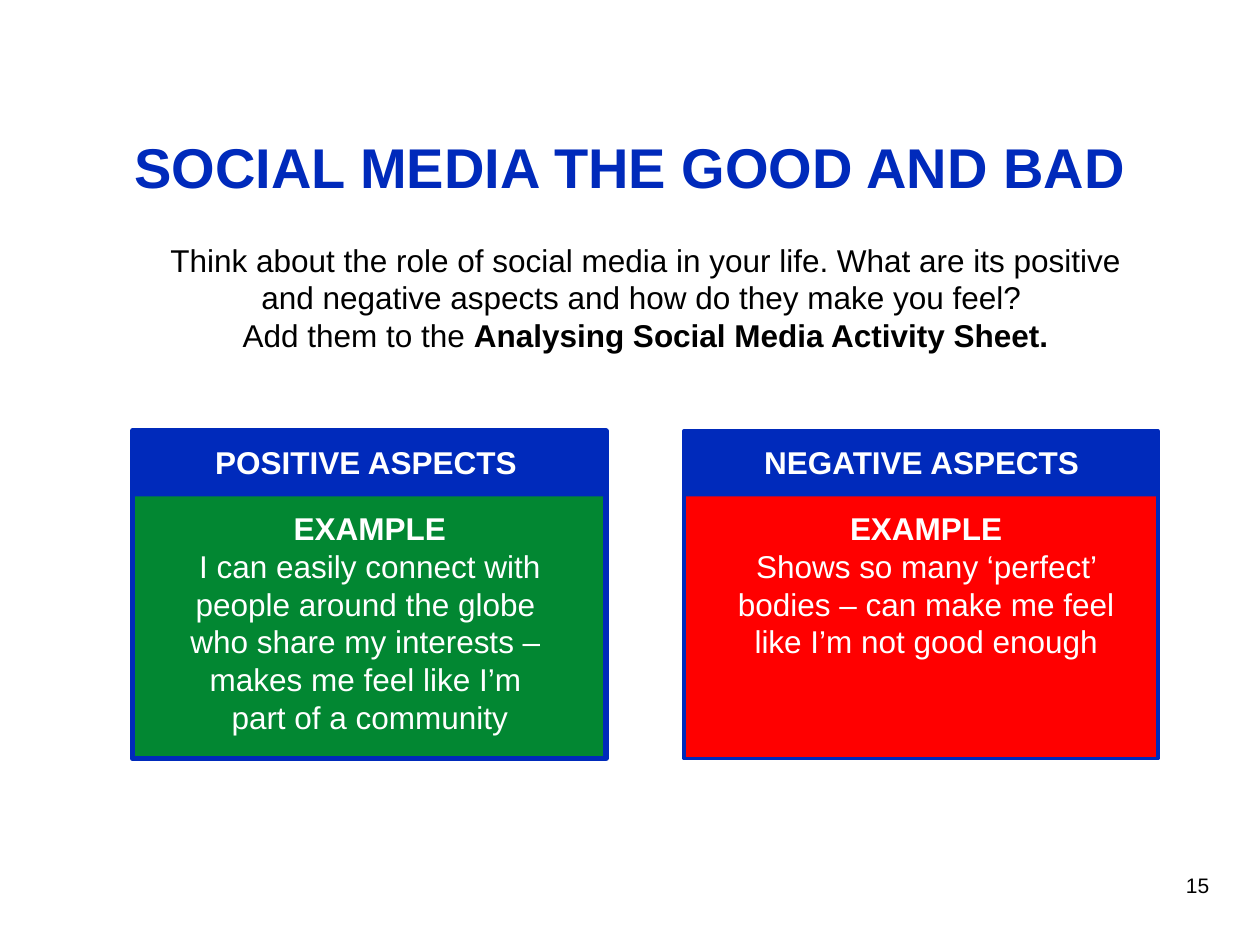
from dataclasses import dataclass

from pptx import Presentation
from pptx.dml.color import RGBColor
from pptx.enum.shapes import MSO_SHAPE as Shape
from pptx.enum.text import MSO_ANCHOR as Anchor, PP_ALIGN as Align
from pptx.util import Inches, Pt

WIDTH, HEIGHT = 10, 7.5
COLORS = {"blue": "002ABB", "green": "028732", "red": "FF0000",
          "white": "FFFFFF", "black": "000000"}

# Cards: shared rows and sizes, in inches
CARD_TOP, CARD_W, CARD_H, HEADER_H = 3.42, 3.76, 2.6, 0.52
CARD_LEFT, CARD_STEP = 1.05, 4.38
LABEL_TOP, LABEL_W, LABEL_H = 3.47, 3.95, 0.4
EXAMPLE_TOP = 3.99


@dataclass
class Box:
    left: float
    top: float
    width: float
    height: float

    def lengths(self) -> list:
        return [Inches(v) for v in (self.left, self.top, self.width, self.height)]


@dataclass
class Run:
    text: str
    bold: bool = False


@dataclass
class Card:
    column: int
    fill: str
    line_width: float
    label: str
    label_left: float
    example: str
    example_box: Box


CARDS = [
    Card(1, "red", 2, "NEGATIVE ASPECTS", 5.34,
         "Shows so many ‘perfect’ bodies – can make me feel like I’m not good enough",
         Box(5.79, EXAMPLE_TOP, 3.12, 1.31)),
    Card(0, "green", 3, "POSITIVE ASPECTS", 0.93,
         "I can easily connect with people around the globe \n"
         "who share my interests – \nmakes me feel like I’m \npart of a community",
         Box(1.26, EXAMPLE_TOP, 3.35, 1.92)),
]


def rgb(name: str) -> RGBColor:
    return RGBColor.from_string(COLORS[name])


def add_text(shapes, box: Box, runs: list[Run], color: str = "black",
             size: float = 18, anchor=Anchor.TOP) -> None:
    """Centred Arial text; a newline in a run becomes a line break."""
    tf = shapes.add_textbox(*box.lengths()).text_frame
    margins = {f"margin_{side}": Inches(0.05)
               for side in ("left", "top", "right", "bottom")}
    for key, value in {"word_wrap": True, "vertical_anchor": anchor, **margins}.items():
        setattr(tf, key, value)
    p = tf.paragraphs[0]
    p.alignment = Align.CENTER
    for run in runs:
        for i, line in enumerate(run.text.split("\n")):
            if i:
                p.add_line_break()
            if not line:
                continue
            r = p.add_run()
            r.text = line
            for key, value in {"name": "Arial", "size": Pt(size), "bold": run.bold}.items():
                setattr(r.font, key, value)
            r.font.color.rgb = rgb(color)


def add_rect(shapes, box: Box, fill: str, line_width: float = 0) -> None:
    sp = shapes.add_shape(Shape.RECTANGLE, *box.lengths())
    sp.shadow.inherit = False
    sp.fill.solid()
    sp.fill.fore_color.rgb = rgb(fill)
    if line_width:
        sp.line.color.rgb = rgb("blue")
        sp.line.width = Pt(line_width)
    else:
        sp.line.fill.background()


def add_card(shapes, card: Card) -> None:
    left = CARD_LEFT + card.column * CARD_STEP
    group = shapes.add_group_shape().shapes
    add_rect(group, Box(left, CARD_TOP, CARD_W, CARD_H), card.fill, card.line_width)
    add_rect(group, Box(left, CARD_TOP, CARD_W, HEADER_H), "blue")
    add_text(group, Box(card.label_left, LABEL_TOP, LABEL_W, LABEL_H),
             [Run(card.label, True)], "white")
    add_text(shapes, card.example_box,
             [Run("EXAMPLE\n", True), Run(card.example)], "white")


def main() -> None:
    prs = Presentation()
    prs.slide_width, prs.slide_height = Inches(WIDTH), Inches(HEIGHT)
    shapes = prs.slides.add_slide(prs.slide_layouts[6]).shapes

    # Title and task
    add_text(shapes, Box(0.5, 0.77, 9, 1.1),
             [Run("SOCIAL MEDIA THE GOOD AND BAD", True)], "blue", 32, Anchor.MIDDLE)
    add_text(shapes, Box(1.26, 1.86, 7.73, 1.18), [
        Run("Think about the role of social media in your life. What are its "
            "positive and negative aspects and how do they make you feel? \n"
            "Add them to the "),
        Run("Analysing Social Media Activity Sheet.", True)])

    # Positive and negative cards
    for card in CARDS:
        add_card(shapes, card)

    # Slide number
    add_text(shapes, Box(9.02, 6.75, 0.97, 0.55), [Run("15")],
             size=12, anchor=Anchor.MIDDLE)
    prs.save("out.pptx")


if __name__ == "__main__":
    main()
